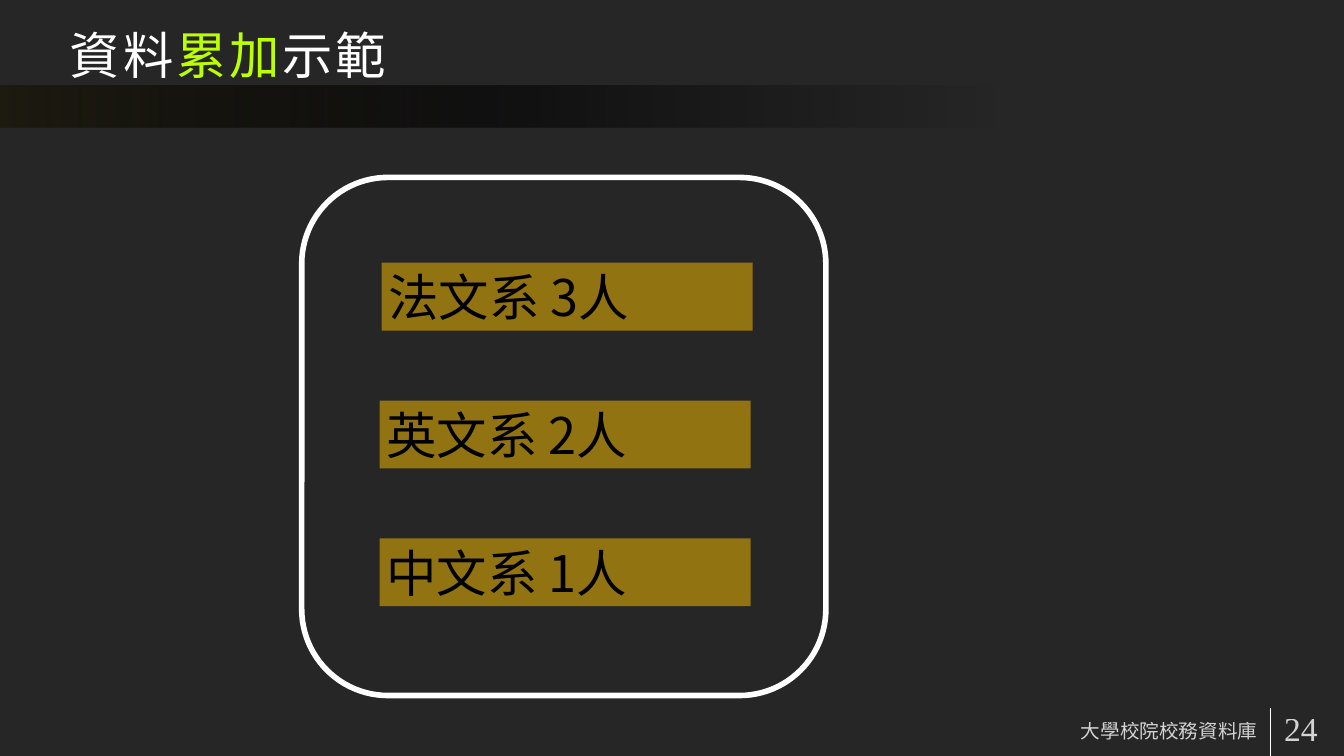
from lxml import etree
from pptx import Presentation
from pptx.dml.color import RGBColor
from pptx.enum.shapes import MSO_CONNECTOR, MSO_SHAPE
from pptx.enum.text import MSO_ANCHOR, PP_ALIGN
from pptx.oxml.ns import qn
from pptx.util import Inches, Pt

RECT, ROUND_RECT = MSO_SHAPE.RECTANGLE, MSO_SHAPE.ROUNDED_RECTANGLE
TOP, MIDDLE, BOTTOM = MSO_ANCHOR.TOP, MSO_ANCHOR.MIDDLE, MSO_ANCHOR.BOTTOM
LEFT, RIGHT = PP_ALIGN.LEFT, PP_ALIGN.RIGHT
SERIF, SANS = "Times New Roman", "Noto Sans CJK SC"
WHITE, BLACK, LIME, AMBER = "FFFFFF", "000000", "BBFF02", "FFC000"
BACKGROUND = "262626"


def rgb(color):
    return RGBColor.from_string(color)


def add_alpha(clr, percent):
    etree.SubElement(clr, qn("a:alpha")).set("val", str(percent * 1000))


def paint(fill, color, alpha=100):
    """Solid fill with an opacity in percent."""
    fill.solid()
    fill.fore_color.rgb = rgb(color)
    if alpha < 100:
        add_alpha(fill._xPr.find(qn("a:solidFill"))[0], alpha)


def write(shape, runs, size, font, anchor, align=LEFT, inset=(0.18, 0.09),
          alpha=100, spacing=0):
    """Write one paragraph of (text, colour) runs into a shape."""
    tf = shape.text_frame
    tf.word_wrap = True
    tf.vertical_anchor = anchor
    tf.margin_left = tf.margin_right = Inches(inset[0])
    tf.margin_top = tf.margin_bottom = Inches(inset[1])
    p = tf.paragraphs[0]
    p.alignment = align
    p.font.size, p.font.name = Pt(size), font
    for text, color in runs:
        r = p.add_run()
        r.text = text
        paint(r.font.fill, color, alpha)
        rPr = r.font._element
        if spacing:
            rPr.set("spc", str(spacing * 100))
        if font == SANS:
            etree.SubElement(rPr, qn("a:ea")).set("typeface", font)


def add_box(s, kind, box):
    sp = s.shapes.add_shape(kind, *map(Inches, box))
    sp.shadow.inherit = False
    sp.line.fill.background()
    return sp


def add_header(s, box):
    """Title above a band that fades out to the right."""
    x, y, w, h = box
    band = add_box(s, RECT, (x, 1.27, w, h - 1.27))
    band.fill.gradient()
    band.fill.gradient_angle = 0
    stops = band.fill._xPr.find(qn("a:gradFill")).find(qn("a:gsLst"))
    stops.clear()
    for pos, color, alpha in ((0, "1E1C11", 100), (39, BLACK, 54), (74, BLACK, 0)):
        gs = etree.SubElement(stops, qn("a:gs"), pos=str(pos * 1000))
        add_alpha(etree.SubElement(gs, qn("a:srgbClr"), val=color), alpha)

    title = s.shapes.add_textbox(Inches(x + 0.86), Inches(y), Inches(18), Inches(1.35))
    write(title, [("資料", WHITE), ("累加", LIME), ("示範", WHITE)],
          54, SERIF, BOTTOM, spacing=3)


def add_footer(s, box):
    """Footer text and page number with a rule between them."""
    x, y, w, h = box
    rule_x = Inches(18.9)
    rule = s.shapes.add_connector(MSO_CONNECTOR.STRAIGHT, rule_x, Inches(y),
                                  rule_x, Inches(y + h))
    rule.line.color.rgb = rgb(WHITE)
    rule.line.width = Pt(0.75)
    etree.SubElement(rule._element.spPr, qn("a:effectLst"))

    for left, width, text, size, anchor, align in (
            (x, 11.73, "大學校院校務資料庫", 21, BOTTOM, RIGHT),
            (18.93, 1.15, "24", 36, MIDDLE, LEFT)):
        tb = s.shapes.add_textbox(Inches(left), Inches(y), Inches(width), Inches(0.6))
        write(tb, [(text, WHITE)], size, SERIF, anchor, align, alpha=80)


def add_departments(s, box):
    """Rounded frame around evenly spaced department bars."""
    x, y, w, h = box
    bars = ((1.19, "法文系 3人"), (1.16, "英文系 2人"), (1.16, "中文系 1人"))
    for i, (indent, text) in enumerate(bars):
        bar = add_box(s, RECT, (x + indent, y + 1.27 + i * 2.05, 5.52, 1.01))
        paint(bar.fill, AMBER, 50)
        write(bar, [(text, BLACK)], 54, SANS, MIDDLE, inset=(0.1, 0.05))

    frame = add_box(s, ROUND_RECT, box)
    frame.fill.background()
    frame.line.color.rgb = rgb(WHITE)
    frame.line.width = Pt(6)


def main():
    prs = Presentation()
    prs.slide_width, prs.slide_height = Inches(20), Inches(11.25)
    s = prs.slides.add_slide(prs.slide_layouts[6])
    paint(s.background.fill, BACKGROUND)
    add_header(s, (0, 0, 20, 1.9))
    add_footer(s, (7.16, 10.54, 12.84, 0.71))
    add_departments(s, (4.49, 2.64, 7.8, 7.71))
    prs.save("out.pptx")


if __name__ == "__main__":
    main()
